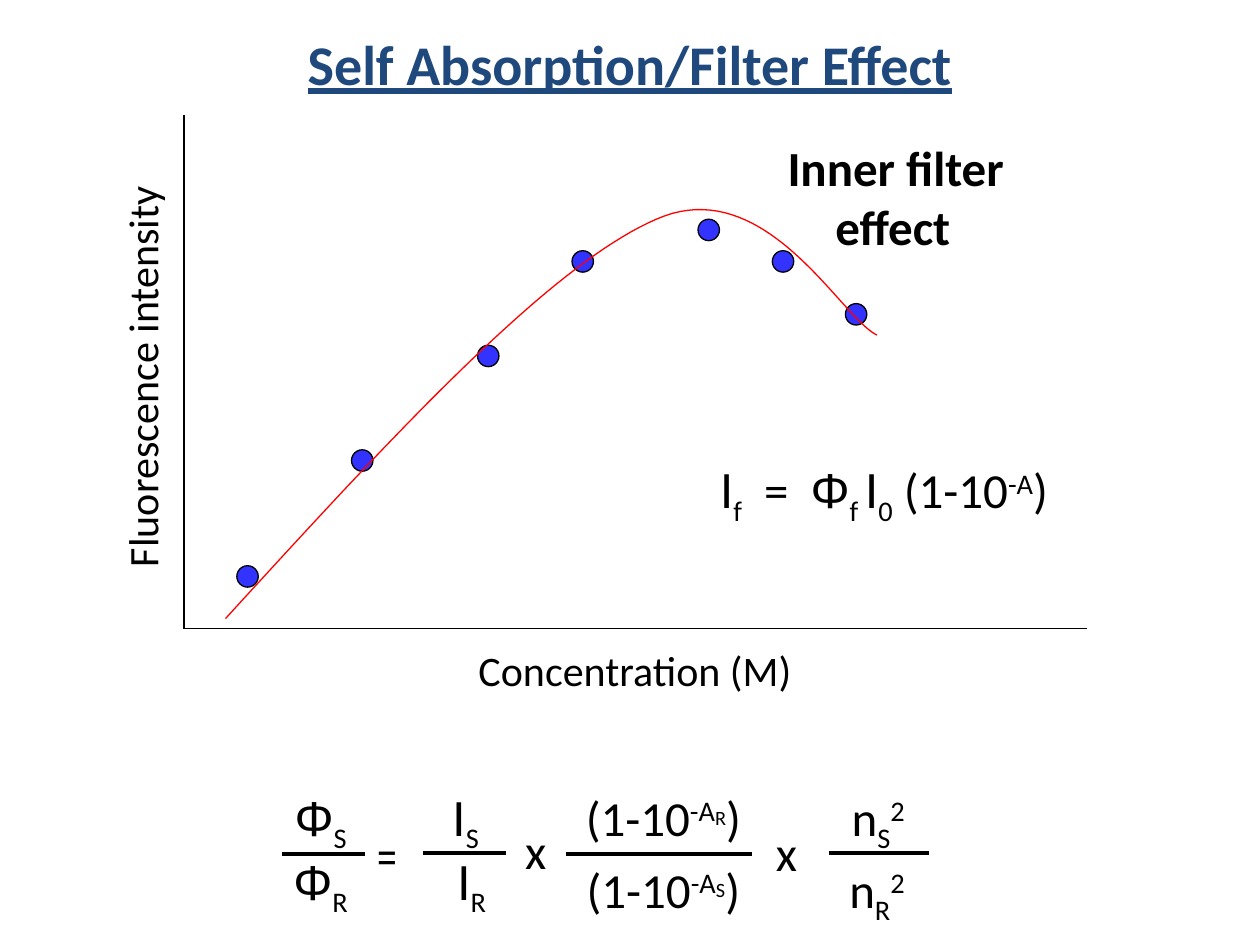
from typing import NamedTuple

from lxml.etree import SubElement
from pptx import Presentation
from pptx.dml.color import RGBColor
from pptx.enum.shapes import MSO_CONNECTOR, MSO_SHAPE
from pptx.enum.text import MSO_ANCHOR, MSO_AUTO_SIZE as Fit, PP_ALIGN as Align
from pptx.oxml.ns import qn
from pptx.util import Inches, Pt

BLACK = "000000"
FACES = {"Ι": "Arial", "Φ": "Arial", "=": "Karla"}
SUB, SUP = -25, 30


class Bit(NamedTuple):
    text: str
    base: int = 0
    size: int = 28


class Term(NamedTuple):
    x: float
    y: float
    w: float
    bits: list[Bit]
    align: Align = Align.LEFT


class Rule(NamedTuple):
    x1: float
    y1: float
    x2: float
    y2: float
    width: float


def color(code: str) -> RGBColor:
    return RGBColor.from_string(code)


def style(para, size: int, align: Align, code: str = BLACK) -> None:
    para.alignment = align
    para.font.name = "Calibri"
    para.font.size = Pt(size)
    para.font.color.rgb = color(code)


def place(shape, x: float, y: float, w: float, h: float) -> None:
    shape.left, shape.top = Inches(x), Inches(y)
    shape.width, shape.height = Inches(w), Inches(h)


def add_rule(slide, rule: Rule) -> None:
    ends = [Inches(v) for v in rule[:4]]
    line = slide.shapes.add_connector(MSO_CONNECTOR.STRAIGHT, *ends)
    line.line.color.rgb = color(BLACK)
    line.line.width = Pt(rule.width)
    SubElement(line._element.spPr, qn("a:effectLst"))


def add_dot(slide, x: float, y: float) -> None:
    size = Inches(0.17)
    dot = slide.shapes.add_shape(MSO_SHAPE.OVAL, Inches(x), Inches(y), size, size)
    dot.shadow.inherit = False
    dot.fill.solid()
    dot.fill.fore_color.rgb = color("3333FF")
    dot.line.color.rgb = color(BLACK)
    dot.line.width = Pt(0.75)


def add_label(slide, text: str, x: float, y: float, w: float, turn: int = 0) -> None:
    box = slide.shapes.add_textbox(Inches(x), Inches(y), Inches(w), Inches(0.5))
    box.rotation = turn
    box.text_frame.word_wrap = True
    para = box.text_frame.paragraphs[0]
    para.text = text
    style(para, 24, Align.CENTER)


def add_term(slide, term: Term) -> None:
    box = slide.shapes.add_textbox(
        Inches(term.x), Inches(term.y), Inches(term.w), Inches(0.57)
    )
    frame = box.text_frame
    frame.word_wrap = False
    frame.auto_size = Fit.SHAPE_TO_FIT_TEXT
    para = frame.paragraphs[0]
    style(para, 28, term.align)
    for bit in term.bits:
        run = para.add_run()
        run.text = bit.text
        run.font.size = Pt(bit.size)
        run.font.name = FACES.get(bit.text, "Calibri")
        run.font.color.rgb = color(BLACK)
        if bit.base:
            run._r.get_or_add_rPr().set("baseline", str(bit.base * 1000))


def bezier(ends: list[tuple[float, float]], t: float) -> tuple[int, int]:
    parts = ((1 - t) ** 3, 3 * t * (1 - t) ** 2, 3 * t * t * (1 - t), t**3)
    x, y = (Inches(sum(k * p[i] for k, p in zip(parts, ends))) for i in (0, 1))
    return x, y


def add_curve(slide, knots: list[tuple[float, float]], steps: int = 40) -> None:
    points = [
        bezier(knots[i : i + 4], n / steps)
        for i in range(0, len(knots) - 1, 3)
        for n in range(1, steps + 1)
    ]
    x, y = knots[0]
    pen = slide.shapes.build_freeform(Inches(x), Inches(y))
    pen.add_line_segments(points, close=False)
    curve = pen.convert_to_shape()
    curve.shadow.inherit = False
    curve.fill.background()
    curve.line.color.rgb = color("FF0000")
    curve.line.width = Pt(0.75)


def add_heads(slide) -> None:
    title, body = slide.placeholders
    place(title, 0.5, 0, 9, 1)
    title.text_frame.vertical_anchor = MSO_ANCHOR.MIDDLE
    para = title.text_frame.paragraphs[0]
    para.text = "Self Absorption/Filter Effect"
    style(para, 32, Align.CENTER, "1F497D")
    para.font.bold = para.font.underline = True

    place(body, 6.15, 1.04, 2.08, 1.03)
    body.text_frame.auto_size = Fit.NONE
    para = body.text_frame.paragraphs[0]
    para.text = "Inner filter effect"
    style(para, 28, Align.LEFT)
    para.font.bold = True
    props = para._p.get_or_add_pPr()
    props.set("marL", str(Inches(0.38)))
    props.set("indent", str(Inches(-0.38)))
    props.insert(0, props.makeelement(qn("a:buNone"), {}))


def yields(low: str) -> list[Bit]:
    return [Bit("(1-10"), Bit("-A", SUP), Bit(low, SUP, 20), Bit(")")]


def index(low: str) -> list[Bit]:
    return [Bit("n"), Bit(low, SUB), Bit("2", SUP)]


RULES = [
    Rule(1.46, 0.91, 1.46, 4.99, 0.75),
    Rule(1.46, 4.99, 8.63, 4.99, 0.75),
    Rule(2.24, 6.78, 2.9, 6.78, 2.25),
    Rule(3.36, 6.77, 4.02, 6.77, 2.25),
    Rule(4.49, 6.78, 5.97, 6.78, 2.25),
    Rule(6.58, 6.77, 7.37, 6.77, 2.25),
]
DOTS = [
    (1.88, 4.49), (2.79, 3.57), (3.79, 2.74), (4.54, 1.99),
    (5.54, 1.74), (6.13, 1.99), (6.71, 2.41),
]
KNOTS = [
    (1.79, 4.91), (3.07, 3.51), (4.35, 2.11), (5.21, 1.74),
    (6.07, 1.36), (6.67, 2.52), (6.96, 2.66),
]
TERMS = [
    Term(5.47, 3.6, 3.09, [
        Bit("Ι"), Bit("f", SUB), Bit("  =  "), Bit("Φ"), Bit("f ", SUB),
        Bit("Ι"), Bit("0", SUB), Bit(" (1-10"), Bit("-A", SUP), Bit(")"),
    ], Align.CENTER),
    Term(2.24, 6.2, 0.68, [Bit("Φ"), Bit("S", SUB)]),
    Term(2.23, 6.71, 0.7, [Bit("Φ"), Bit("R", SUB)]),
    Term(2.87, 6.47, 0.49, [Bit("=")]),
    Term(3.49, 6.2, 0.51, [Bit("Ι"), Bit("S", SUB)]),
    Term(3.53, 6.71, 0.54, [Bit("Ι"), Bit("R", SUB)]),
    Term(4.07, 6.46, 0.37, [Bit("x")]),
    Term(4.5, 6.2, 1.53, yields("R"), Align.CENTER),
    Term(4.5, 6.77, 1.53, yields("S"), Align.CENTER),
    Term(6.06, 6.48, 0.37, [Bit("x")]),
    Term(6.63, 6.2, 0.68, index("S"), Align.CENTER),
    Term(6.62, 6.77, 0.68, index("R"), Align.CENTER),
]


def main() -> None:
    deck = Presentation()
    deck.slide_width, deck.slide_height = Inches(10), Inches(7.5)
    slide = deck.slides.add_slide(deck.slide_layouts[1])
    add_heads(slide)
    for rule in RULES:
        add_rule(slide, rule)
    for dot in DOTS:
        add_dot(slide, *dot)
    add_curve(slide, KNOTS)
    add_label(slide, "Concentration (M)", 3.31, 5.07, 3.46)
    add_label(slide, "Fluorescence intensity", -0.65, 2.74, 3.55, 270)
    for term in TERMS:
        add_term(slide, term)
    deck.save("out.pptx")


if __name__ == "__main__":
    main()
